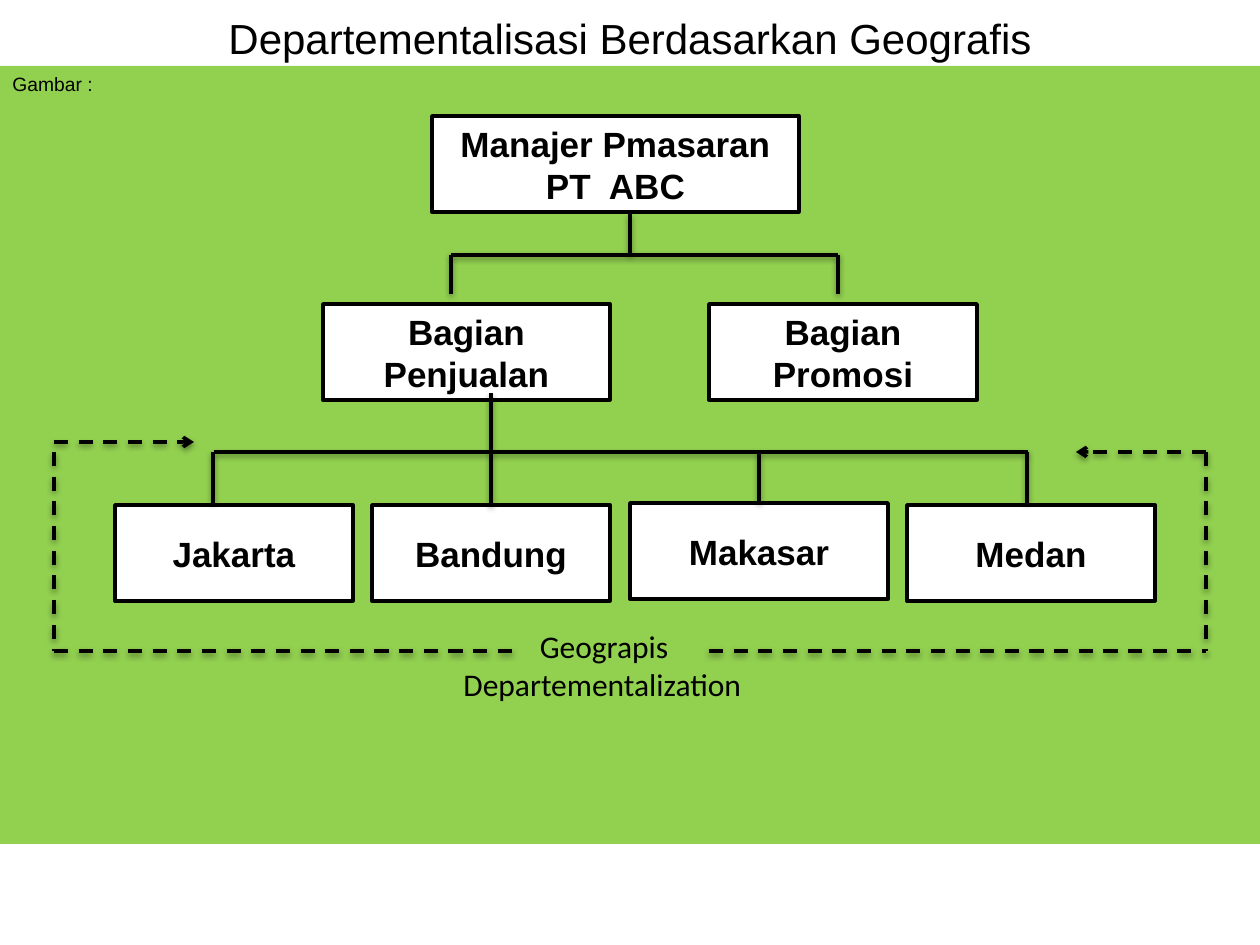
import pptx
import pptx.util
import pptx.dml.color
import pptx.enum.dml
import pptx.enum.shapes
import pptx.enum.text
import pptx.oxml

RGBColor = pptx.dml.color.RGBColor
BLACK = RGBColor(0x00, 0x00, 0x00)
WHITE = RGBColor(0xFF, 0xFF, 0xFF)
GREEN = RGBColor(0x92, 0xD0, 0x50)

ALIGN = pptx.enum.text.PP_ALIGN
ANCHOR = pptx.enum.text.MSO_ANCHOR
EMU_PER_PX = 914400 / 126
LINE_WIDTH = pptx.util.Pt(2)
BOX_HEIGHT = 96

# Content, with lengths in px
TITLE = "Departementalisasi Berdasarkan Geografis"
CAPTION = "Gambar :"
BOXES = [  # text, left, top, width
    ("Manajer Pmasaran PT  ABC", 432, 116, 367),
    ("Bagian Promosi", 709, 304, 268),
    ("Bagian Penjualan", 323, 304, 287),
    ("Jakarta", 115, 505, 238),
    ("Bandung", 372, 505, 238),
    ("Medan", 907, 505, 248),
    ("Makasar", 630, 503, 258),
]
TREE_LINES = [  # from x, from y, to x, to y, box joined at its top
    (630, 214, 630, 255, None),
    (451, 255, 838, 255, None),
    (214, 452, 1028, 452, None),
    (213, 452, 213, 503, None),
    (759, 452, 759, 503, "Makasar"),
    (1027, 452, 1027, 503, None),
    (451, 255, 451, 294, None),
    (838, 255, 838, 294, None),
    (491, 393, 491, 505, "Bandung"),
]
REGION_LABEL = [("Geograpis", ALIGN.CENTER), ("Departementalization", ALIGN.LEFT)]
REGION_LINES = [  # from x, from y, to x, to y, arrowhead
    (54, 651, 512, 651, False),
    (709, 651, 1206, 651, False),
    (54, 452, 54, 651, False),
    (1206, 452, 1206, 651, False),
    (54, 442, 194, 442, True),
    (1206, 452, 1076, 452, True),
]


def px(*lengths):
    return [pptx.util.Emu(round(length * EMU_PER_PX)) for length in lengths]


def write(paragraph, text, size, font="Arial", bold=False, align=ALIGN.CENTER):
    paragraph.alignment = align
    run = paragraph.add_run()
    run.text = text
    run.font.name = font
    run.font.size = pptx.util.Pt(size)
    run.font.bold = bold
    run.font.color.rgb = BLACK


def add_rectangle(slide, left, top, width, height, fill):
    shape = slide.shapes.add_shape(
        pptx.enum.shapes.MSO_SHAPE.RECTANGLE, *px(left, top, width, height))
    shape.shadow.inherit = False
    shape.fill.solid()
    shape.fill.fore_color.rgb = fill
    shape.text_frame.word_wrap = True
    return shape


def add_line(slide, *ends):
    # The theme's soft shadow is kept on every line
    line = slide.shapes.add_connector(
        pptx.enum.shapes.MSO_CONNECTOR.STRAIGHT, *px(*ends))
    line.line.color.rgb = BLACK
    line.line.width = LINE_WIDTH
    return line


def main():
    presentation = pptx.Presentation()
    presentation.slide_width, presentation.slide_height = px(1260, 945)
    slide = presentation.slides.add_slide(presentation.slide_layouts[5])

    # Title
    title = slide.shapes.title
    title.left, title.top, title.width, title.height = px(0, 0, 1260, 76)
    title.text_frame.vertical_anchor = ANCHOR.MIDDLE
    write(title.text_frame.paragraphs[0], TITLE, 24)

    # Green panel with caption
    panel = add_rectangle(slide, 0, 66, 1260, 778, GREEN)
    panel.line.fill.background()
    panel.text_frame.vertical_anchor = ANCHOR.TOP
    write(panel.text_frame.paragraphs[0], CAPTION, 11, align=ALIGN.LEFT)

    # Organisation boxes
    boxes = {}
    for text, left, top, width in BOXES:
        box = add_rectangle(slide, left, top, width, BOX_HEIGHT, WHITE)
        box.line.color.rgb = BLACK
        box.line.width = LINE_WIDTH
        box.text_frame.vertical_anchor = ANCHOR.MIDDLE
        write(box.text_frame.paragraphs[0], text, 20, bold=True)
        boxes[text] = box

    # Lines of the tree
    for *ends, joined in TREE_LINES:
        line = add_line(slide, *ends)
        if joined:
            line.end_connect(boxes[joined], 0)

    # Region label
    label = slide.shapes.add_textbox(*px(451, 621, 306, 89))
    frame = label.text_frame
    frame.word_wrap = False
    frame.auto_size = pptx.enum.text.MSO_AUTO_SIZE.SHAPE_TO_FIT_TEXT
    for index, (text, align) in enumerate(REGION_LABEL):
        paragraph = frame.add_paragraph() if index else frame.paragraphs[0]
        write(paragraph, text, 18, font="Calibri", align=align)

    # Dashed region outline
    for *ends, arrow in REGION_LINES:
        line = add_line(slide, *ends)
        line.line.dash_style = pptx.enum.dml.MSO_LINE.DASH
        if arrow:
            line.line._get_or_add_ln().append(pptx.oxml.parse_xml(
                '<a:tailEnd xmlns:a="http://schemas.openxmlformats.org/'
                'drawingml/2006/main" type="arrow"/>'))

    presentation.save("out.pptx")


if __name__ == "__main__":
    main()
